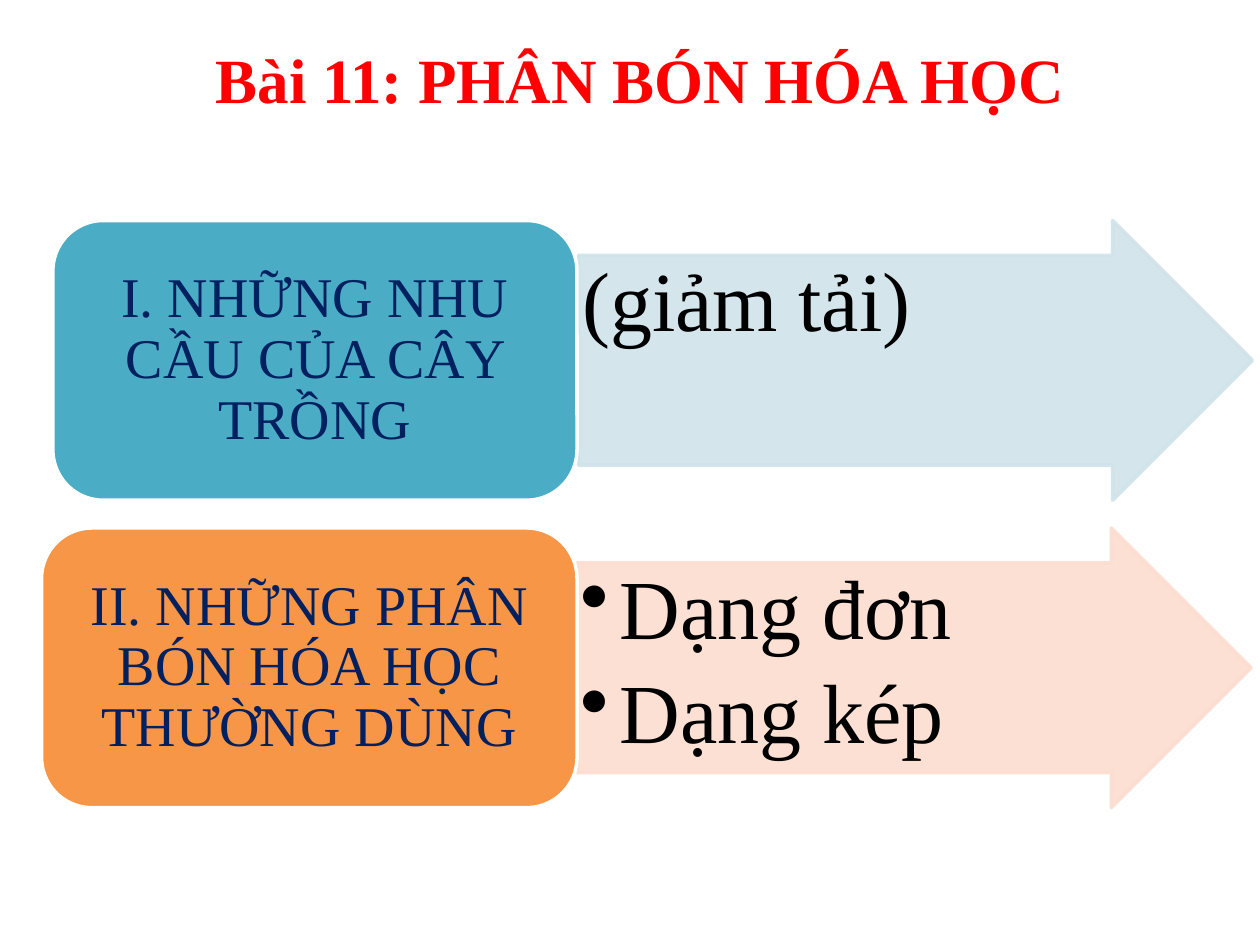
import pptx
import pptx.util
import pptx.dml.color
import pptx.enum.shapes
import pptx.enum.text
import pptx.oxml.ns
from lxml import etree

Inches, Pt = pptx.util.Inches, pptx.util.Pt
RGB = pptx.dml.color.RGBColor.from_string
SHAPES = pptx.enum.shapes.MSO_SHAPE
ALIGN, ANCHOR = pptx.enum.text.PP_ALIGN, pptx.enum.text.MSO_ANCHOR

# Content
TITLE = "Bài 11: PHÂN BÓN HÓA HỌC"
SECTIONS = [
    {"heading": "I. NHỮNG NHU CẦU CỦA CÂY TRỒNG", "points": ["(giảm tải)"],
     "bullets": False, "box": "4BACC6", "arrow": "D0E3EA", "left": 0.42, "arrow_left": 4.59},
    {"heading": "II. NHỮNG PHÂN BÓN HÓA HỌC THƯỜNG DÙNG", "points": ["Dạng đơn", "Dạng kép"],
     "bullets": True, "box": "F79646", "arrow": "FCDDCF", "left": 0.33, "arrow_left": 4.58},
]

# Theme
THEME = {
    "font": "Times New Roman", "outline": "FFFFFF", "line_width": 2, "arrow_alpha": 90,
    "title": {"size": 36, "color": "FF0000", "bold": True},
    "heading": {"size": 32, "color": "002060", "bold": False},
    "point": {"size": 48, "color": "000000", "bold": False},
}

# Grid in inches
WIDTH, HEIGHT = 10, 7.5
ROW_TOP, ROW_HEIGHT, ROW_GAP = 1.75, 2.22, 0.22
BOX_RIGHT, ARROW_WIDTH, INDENT = 4.58, 5.35, 0.31


def set_all(target, values):
    for name, value in values.items():
        setattr(target, name, value)


def set_frame(shape, anchor, horizontal, vertical):
    set_all(shape.text_frame, {
        "word_wrap": True, "vertical_anchor": anchor,
        "margin_left": Inches(horizontal), "margin_right": Inches(horizontal),
        "margin_top": Inches(vertical), "margin_bottom": Inches(vertical)})


def write(paragraph, text, style, **layout):
    set_all(paragraph, layout)
    run = paragraph.add_run()
    run.text = text
    set_all(run.font, {"name": THEME["font"], "size": Pt(style["size"]), "bold": style["bold"]})
    run.font.color.rgb = RGB(style["color"])


def add_panel(slide, kind, area, fill, line, adjustments, alpha=100):
    shape = slide.shapes.add_shape(kind, *(Inches(length) for length in area))
    shape.shadow.inherit = False
    for index, value in enumerate(adjustments):
        shape.adjustments[index] = value
    shape.line.width = Pt(THEME["line_width"])
    for target, color in ((shape.fill, fill), (shape.line.fill, line)):
        target.solid()
        target.fore_color.rgb = RGB(color)
    if alpha < 100:
        for color in shape.element.spPr.iter(pptx.oxml.ns.qn("a:srgbClr")):
            etree.SubElement(color, pptx.oxml.ns.qn("a:alpha"), val=str(alpha * 1000))
    return shape


def set_hanging(paragraph, bulleted):
    properties = paragraph._p.get_or_add_pPr()
    properties.set("marL", str(Inches(INDENT)))
    properties.set("indent", str(-Inches(INDENT)))
    if bulleted:
        etree.SubElement(properties, pptx.oxml.ns.qn("a:buChar"), char="•")


def add_section(slide, section, top):
    # Arrow with its points
    arrow = add_panel(slide, SHAPES.RIGHT_ARROW,
                      (section["arrow_left"], top, ARROW_WIDTH, ROW_HEIGHT),
                      section["arrow"], section["arrow"], (0.75, 0.5), THEME["arrow_alpha"])
    set_frame(arrow, ANCHOR.TOP, 0.03, 0.03)
    frame = arrow.text_frame
    for index, point in enumerate(section["points"]):
        paragraph = frame.add_paragraph() if index else frame.paragraphs[0]
        set_hanging(paragraph, section["bullets"])
        write(paragraph, point, THEME["point"], alignment=ALIGN.LEFT,
              line_spacing=0.9, space_after=Pt(8))

    # Heading box
    box = add_panel(slide, SHAPES.ROUNDED_RECTANGLE,
                    (section["left"], top, BOX_RIGHT - section["left"], ROW_HEIGHT),
                    section["box"], THEME["outline"], (0.18,))
    set_frame(box, ANCHOR.MIDDLE, 0.12, 0.06)
    write(box.text_frame.paragraphs[0], section["heading"], THEME["heading"],
          alignment=ALIGN.CENTER, line_spacing=0.9)


def main():
    presentation = pptx.Presentation()
    set_all(presentation, {"slide_width": Inches(WIDTH), "slide_height": Inches(HEIGHT)})
    slide = presentation.slides.add_slide(presentation.slide_layouts[6])

    # Title
    title = slide.shapes.add_textbox(Inches(0.58), 0, Inches(9), Inches(1.25))
    set_frame(title, ANCHOR.MIDDLE, 0.1, 0.05)
    write(title.text_frame.paragraphs[0], TITLE, THEME["title"], alignment=ALIGN.CENTER)

    # Section rows
    for row, section in enumerate(SECTIONS):
        add_section(slide, section, ROW_TOP + row * (ROW_HEIGHT + ROW_GAP))

    presentation.save("out.pptx")


if __name__ == "__main__":
    main()
